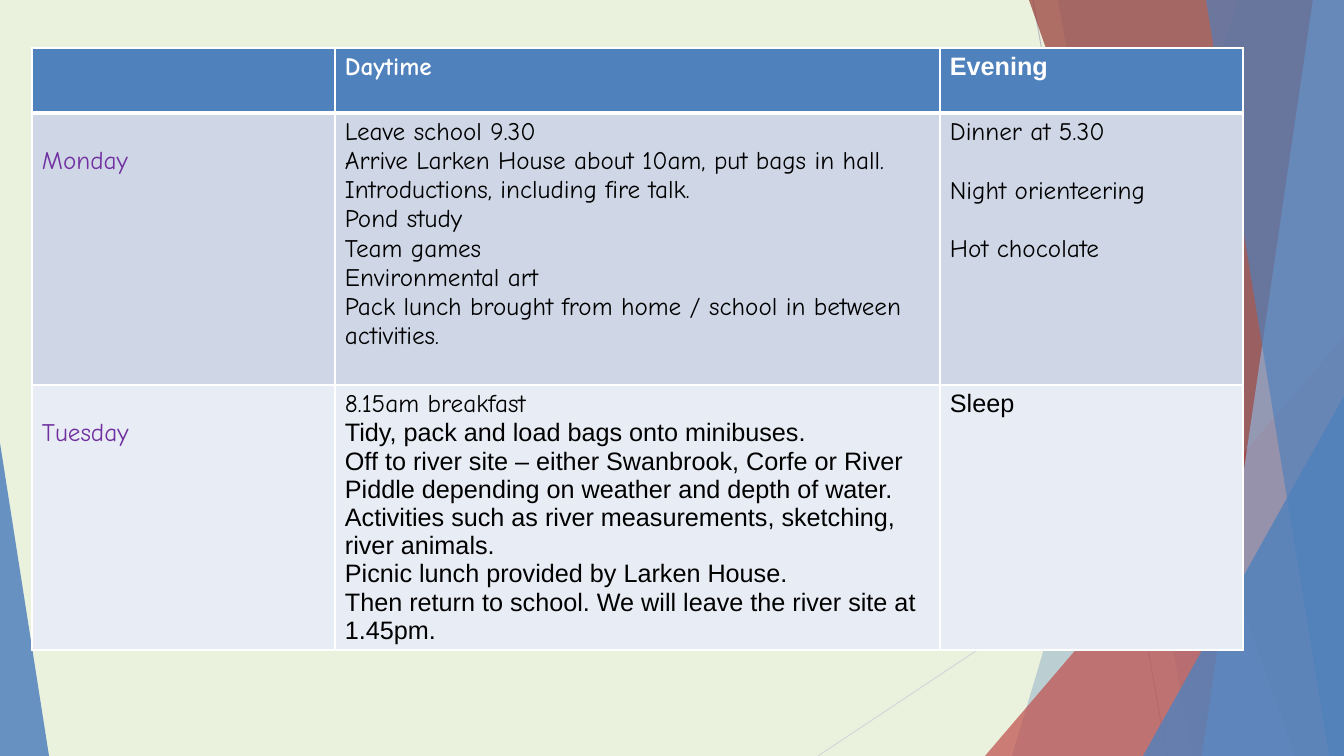
from lxml import etree
from pptx import Presentation
from pptx import util as u
from pptx.dml.color import RGBColor
from pptx.enum import shapes
from pptx.oxml import ns

SCALE = u.Inches(1) / 100.8
WIDTH, HEIGHT = 1344, 756

CREAM = RGBColor(0xEA, 0xF1, 0xDD)
BLUE = RGBColor(0x4F, 0x81, 0xBD)
LIGHT_BLUE = RGBColor(0x93, 0xB3, 0xD7)
RED = RGBColor(0xC0, 0x50, 0x4D)
DARK_RED = RGBColor(0x95, 0x37, 0x34)
GREY = RGBColor(0xBF, 0xBF, 0xBF)
PALE_GREY = RGBColor(0xD8, 0xD8, 0xD8)
WHITE = RGBColor(0xFF, 0xFF, 0xFF)
BLACK = RGBColor(0, 0, 0)
PURPLE = RGBColor(0x70, 0x30, 0xA0)
BAND_DARK = RGBColor(0xCF, 0xD7, 0xE7)
BAND_LIGHT = RGBColor(0xE8, 0xEC, 0xF4)

COMIC, ARIAL = "Comic Neue", "Arial"
LINE_GAP = 21

COLUMNS = [303, 605, 303]
ROWS = [65, 272, 265]
HEADER = [[], [("Daytime", COMIC)], [("Evening", ARIAL)]]
MONDAY = [
    [("Monday", COMIC)],
    [(line, COMIC) for line in (
        "Leave school 9.30",
        "Arrive Larken House about 10am, put bags in hall. Introductions, including fire talk.",
        "Pond study",
        "Team games",
        "Environmental art",
        "Pack lunch brought from home / school in between activities.",
    )],
    [(line, COMIC) for line in ("Dinner at 5.30", "Night orienteering", "Hot chocolate")],
]
TUESDAY = [
    [("Tuesday", COMIC)],
    [("8.15am breakfast", COMIC)] + [(line, ARIAL) for line in (
        "Tidy, pack and load bags onto minibuses.",
        "Off to river site – either Swanbrook, Corfe or River Piddle depending on weather "
        "and depth of water. Activities such as river measurements, sketching, river animals.",
        "Picnic lunch provided by Larken House.",
        "Then return to school. We will leave the river site at 1.45pm.",
    )],
    [("Sleep", ARIAL)],
]


def px(length):
    return u.Emu(round(length * SCALE))


def set_values(target, values):
    for name, value in values.items():
        setattr(target, name, value)


def paint(shape, color, opacity):
    shape.shadow.inherit = False
    shape.line.fill.background()
    shape.fill.solid()
    shape.fill.fore_color.rgb = color
    color_node = shape._element.spPr.find(ns.qn("a:solidFill"))[0]
    etree.SubElement(color_node, ns.qn("a:alpha"), val=str(opacity * 1000))


def add_ray(slide, start, end, color):
    line = slide.shapes.add_connector(
        shapes.MSO_CONNECTOR.STRAIGHT, *map(px, start + end))
    line.line.width = u.Pt(0.75)
    line.line.color.rgb = color
    etree.SubElement(line._element.spPr, ns.qn("a:effectLst"))


def add_panel(slide, box, top_x, bottom_x, color, opacity):
    left, top, width, height = box
    right, bottom = left + width, top + height
    corners = [(left + top_x, top), (right, top), (right, bottom), (left + bottom_x, bottom)]
    points = [(px(x), px(y)) for x, y in corners]
    builder = slide.shapes.build_freeform(*points[0])
    builder.add_line_segments(points[1:], close=True)
    paint(builder.convert_to_shape(), color, opacity)


def add_wedge(slide, box, apex, color, opacity):
    shape = slide.shapes.add_shape(
        shapes.MSO_SHAPE.ISOSCELES_TRIANGLE, *map(px, box))
    shape.adjustments[0] = apex
    paint(shape, color, opacity)


def add_right_facets(slide, box):
    left, top, width, height = box
    right, bottom = left + width, top + height
    add_ray(slide, (left + 48, top), (left + 182, bottom), GREY)
    add_ray(slide, (right, top + 406), (left - 167, bottom), PALE_GREY)

    def corner_wedge(wide, high, color, opacity):
        add_wedge(slide, (right - wide, bottom - high, wide, high), 1, color, opacity)

    add_panel(slide, box, 253, 27, BLUE, 30)
    add_panel(slide, box, 73, 207, BLUE, 20)
    corner_wedge(359, 420, RED, 72)
    add_panel(slide, box, 44, 310, DARK_RED, 70)
    add_panel(slide, box, 328, 217, LIGHT_BLUE, 70)
    add_panel(slide, box, 221, 344, BLUE, 65)
    corner_wedge(201, 360, BLUE, 80)


def add_borders(cell, widths):
    properties = cell._tc.get_or_add_tcPr()
    for side, points in widths.items():
        line = etree.SubElement(properties, ns.qn("a:ln" + side), w=str(u.Pt(points)))
        fill = etree.SubElement(line, ns.qn("a:solidFill"))
        etree.SubElement(fill, ns.qn("a:srgbClr"), val=str(WHITE))


def fill_cell(cell, lines, fill, color, bold, gap):
    cell.fill.solid()
    cell.fill.fore_color.rgb = fill
    frame = cell.text_frame
    for index, (words, font) in enumerate(lines):
        paragraph = frame.paragraphs[0] if index == 0 else frame.add_paragraph()
        if index:
            paragraph.space_before = u.Pt(gap)
        run = paragraph.add_run()
        run.text = words
        set_values(run.font, {"name": font, "size": u.Pt(18), "bold": bold})
        run.font.color.rgb = color


def add_timetable(slide, box):
    table = slide.shapes.add_table(len(ROWS), len(COLUMNS), *map(px, box)).table
    set_values(table, {"first_row": False, "horz_banding": False})
    for column, width in zip(table.columns, COLUMNS):
        column.width = px(width)
    for row, height in zip(table.rows, ROWS):
        row.height = px(height)
    fills = [BLUE, BAND_DARK, BAND_LIGHT]
    for row, entries in enumerate([HEADER, MONDAY, TUESDAY]):
        header = row == 0
        for column, lines in enumerate(entries):
            cell = table.cell(row, column)
            day = column == 0 and not header
            set_values(cell, {
                "margin_left": px(10), "margin_right": px(10),
                "margin_top": px(34 if day else 5), "margin_bottom": px(5),
            })
            add_borders(cell, {"L": 1, "R": 1, "T": 3 if row == 1 else 1,
                               "B": 3 if header else 1})
            color = WHITE if header else PURPLE if day else BLACK
            gap = LINE_GAP if column == 2 else 0
            fill_cell(cell, lines, fills[row], color, header, gap)


def build_timetable_slide(presentation):
    slide = presentation.slides.add_slide(presentation.slide_layouts[6])
    slide.background.fill.solid()
    slide.background.fill.fore_color.rgb = CREAM
    add_right_facets(slide, (985, 0, 359, HEIGHT))
    add_wedge(slide, (0, 443, 49, 313), 0, BLUE, 85)
    add_timetable(slide, (32, 48, sum(COLUMNS), sum(ROWS)))


def main():
    presentation = Presentation()
    set_values(presentation, {"slide_width": px(WIDTH), "slide_height": px(HEIGHT)})
    build_timetable_slide(presentation)
    presentation.save("out.pptx")


if __name__ == "__main__":
    main()
